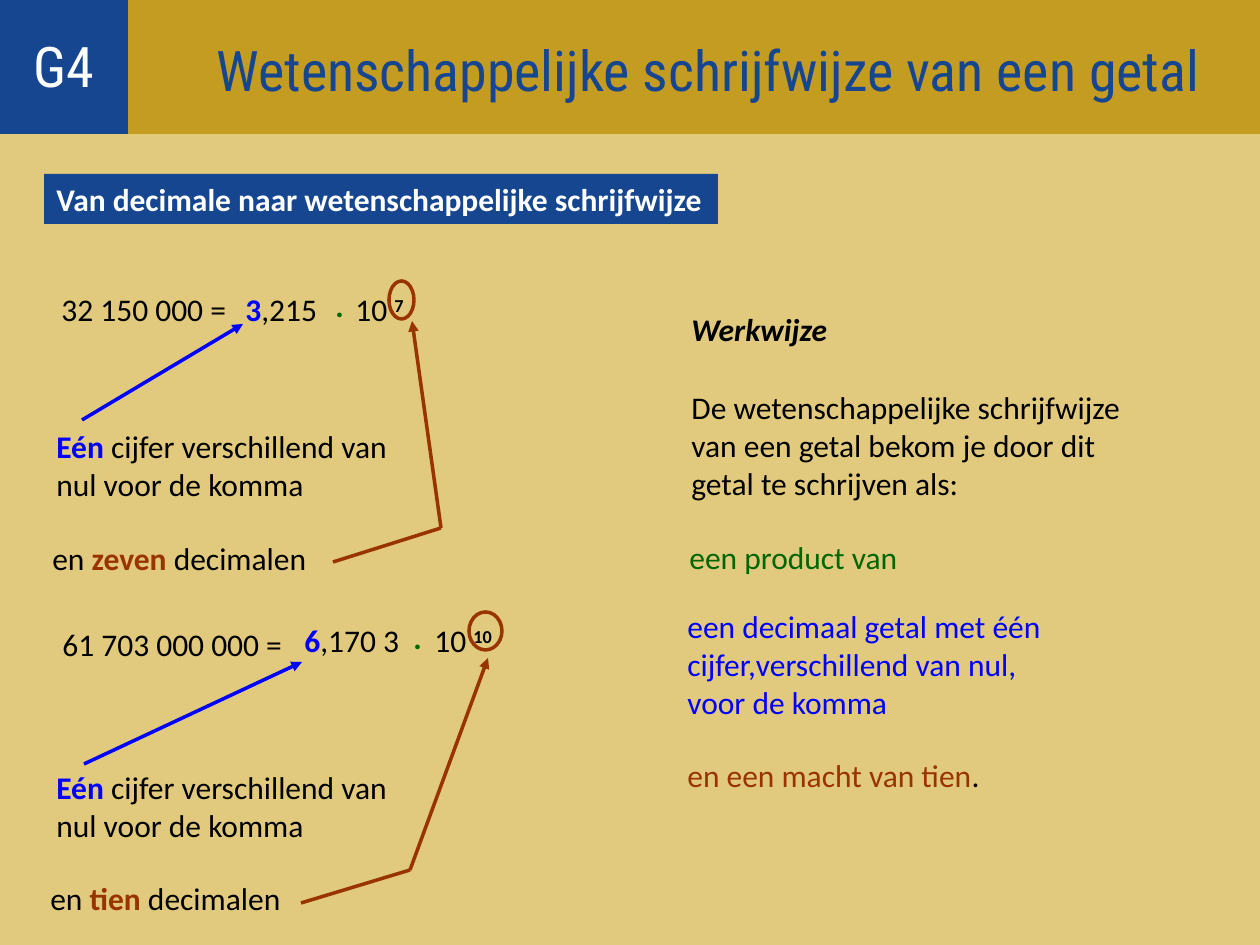
from lxml.etree import SubElement
from pptx import Presentation
from pptx.dml.color import RGBColor
from pptx.enum.shapes import MSO_CONNECTOR, MSO_SHAPE
from pptx.enum.text import MSO_ANCHOR, PP_ALIGN
from pptx.oxml.ns import qn
from pptx.util import Emu, Pt

SCALE = 914400 / 126
SAND = RGBColor(0xE1, 0xCA, 0x7D)
GOLD = RGBColor(0xC5, 0x9C, 0x22)
NAVY = RGBColor(0x17, 0x46, 0x91)
WHITE = RGBColor(0xFF, 0xFF, 0xFF)
PALE = RGBColor(0xFC, 0xFD, 0xFE)
BLACK = RGBColor(0, 0, 0)
BLUE = RGBColor(0, 0, 0xFF)
GREEN = RGBColor(0, 0x66, 0)
BROWN = RGBColor(0x99, 0x33, 0)
HEAD = {"name": "Roboto Condensed", "size": Pt(32)}
BOLD = {"bold": True}


def px(*nums):
    return [Emu(round(num * SCALE)) for num in nums]


class Deck:
    """Draw styled elements on the current slide."""

    base = {"name": "Calibri", "size": Pt(18), "bold": False, "italic": False}

    def __init__(self):
        self.prs = Presentation()
        self.prs.slide_width, self.prs.slide_height = px(1260, 945)
        self.slide = self.prs.slides.add_slide(self.prs.slide_layouts[5])
        back = self.slide.background.fill
        back.solid()
        back.fore_color.rgb = SAND

    def label(self, shape, lines, wrap=False, anchor=MSO_ANCHOR.TOP,
              align=PP_ALIGN.LEFT, space=1.0):
        frame = shape.text_frame
        frame.word_wrap = wrap
        frame.vertical_anchor = anchor
        for spot, parts in enumerate(lines):
            para = frame.add_paragraph() if spot else frame.paragraphs[0]
            para.alignment = align
            para.line_spacing = space
            for text, color, *extra in parts:
                run = para.add_run()
                run.text = text
                run.font.color.rgb = color
                style = self.base | (extra[0] if extra else {})
                for key, value in style.items():
                    setattr(run.font, key, value)
        return frame

    def title(self, box, text, color, fill):
        shape = self.slide.shapes.title
        shape.left, shape.top, shape.width, shape.height = px(*box)
        shape.fill.solid()
        shape.fill.fore_color.rgb = fill
        frame = self.label(shape, [[(text, color, HEAD)]], True,
                           MSO_ANCHOR.MIDDLE, PP_ALIGN.CENTER)
        frame.margin_left, frame.margin_top = px(170, 14)

    def text(self, box, *lines, **look):
        shape = self.slide.shapes.add_textbox(*px(*box))
        return self.label(shape, lines, **look)

    def shape(self, kind, box, fill=None, line=None):
        shape = self.slide.shapes.add_shape(kind, *px(*box))
        shape.shadow.inherit = False
        if fill is None:
            shape.fill.background()
        else:
            shape.fill.solid()
            shape.fill.fore_color.rgb = fill
        if line is None:
            shape.line.fill.background()
        else:
            shape.line.color.rgb = line
            shape.line.width = Pt(2)
        return shape

    def panel(self, box, fill, *parts, **look):
        self.label(self.shape(MSO_SHAPE.RECTANGLE, box, fill), [parts], **look)

    def line(self, start, end, color, arrow=True):
        wire = self.slide.shapes.add_connector(
            MSO_CONNECTOR.STRAIGHT, *px(*start, *end))
        wire.line.color.rgb = color
        wire.line.width = Pt(2)
        props = wire._element.spPr
        if arrow:
            SubElement(props.find(qn("a:ln")), qn("a:tailEnd"), type="triangle")
        SubElement(props, qn("a:effectLst"))

    def power(self, box, text):
        frame = self.text(box, [("10 ", BLACK), (text, BLACK, BOLD)], space=1.5)
        frame.paragraphs[0].runs[1].font._element.set("baseline", "30000")

    def sum(self, row):
        lead, rest = row["mant"]
        self.text((*row["at"], 268, 69), [(row["num"], BLACK)], space=1.5)
        self.text((*row["lead"], 149, 79),
                  [(lead, BLUE, BOLD), (rest, BLACK)], space=1.5)
        self.text((*row["dot"], 49, 79), [(".", GREEN, BOLD)], space=1.5)
        self.power((*row["ten"], 110, 79), row["exp"])
        self.shape(MSO_SHAPE.OVAL, row["ring"], line=BROWN)
        self.line(*row["blue"], BLUE)
        self.text((44, row["note"], 437, 88),
                  [("Eén ", BLUE, BOLD), ("cijfer verschillend van", BLACK)],
                  [("nul voor de komma", BLACK)])
        start, bend, end = row["brown"]
        self.line(start, bend, BROWN, arrow=False)
        self.line(bend, end, BROWN)
        self.text((*row["count"], 290, 50), [
            ("en ", BLACK), (row["word"], BROWN, BOLD), (" decimalen", BLACK)])


ROWS = [
    {"num": "32 150 000 =", "mant": ("3", ",215"), "exp": "7", "word": "zeven",
     "at": (49, 265), "lead": (233, 265), "dot": (323, 261), "ten": (343, 265),
     "ring": (389, 281, 25, 38), "blue": ((82, 420), (243, 324)), "note": 421,
     "brown": ((333, 562), (441, 528), (412, 321)), "count": (40, 533)},
    {"num": "61 703 000 000 =", "mant": ("6", ",170 3"), "exp": "10", "word": "tien",
     "at": (50, 600), "lead": (292, 596), "dot": (401, 593), "ten": (422, 596),
     "ring": (469, 612, 33, 38), "blue": ((84, 764), (302, 662)), "note": 762,
     "brown": ((301, 903), (410, 870), (488, 658)), "count": (38, 873)},
]


def main():
    deck = Deck()
    deck.title((0, -4, 1260, 138), "Wetenschappelijke schrijfwijze van een getal",
               NAVY, GOLD)
    deck.panel((0, -4, 128, 138), NAVY, ("G4", PALE, HEAD),
               anchor=MSO_ANCHOR.MIDDLE, align=PP_ALIGN.CENTER, wrap=True)
    deck.panel((44, 174, 674, 50), NAVY,
               ("Van decimale naar wetenschappelijke schrijfwijze", WHITE, BOLD))
    for row in ROWS:
        deck.sum(row)
    deck.text((679, 304, 163, 50),
              [("Werkwijze", BLACK, {"bold": True, "italic": True})])
    deck.text((679, 382, 486, 130),
              [("De wetenschappelijke schrijfwijze", BLACK)],
              [("van een getal bekom je door dit", BLACK)],
              [("getal te schrijven als:", BLACK)])
    deck.text((677, 532, 236, 50), [("een product van", GREEN)])
    deck.text((675, 601, 471, 130),
              [("een decimaal getal met één", BLUE)],
              [("cijfer,verschillend van nul,", BLUE)],
              [("voor de komma", BLUE)])
    deck.text((675, 750, 372, 50),
              [("en een macht van tien", BROWN), (".", BLACK)])
    deck.prs.save("out.pptx")


if __name__ == "__main__":
    main()
